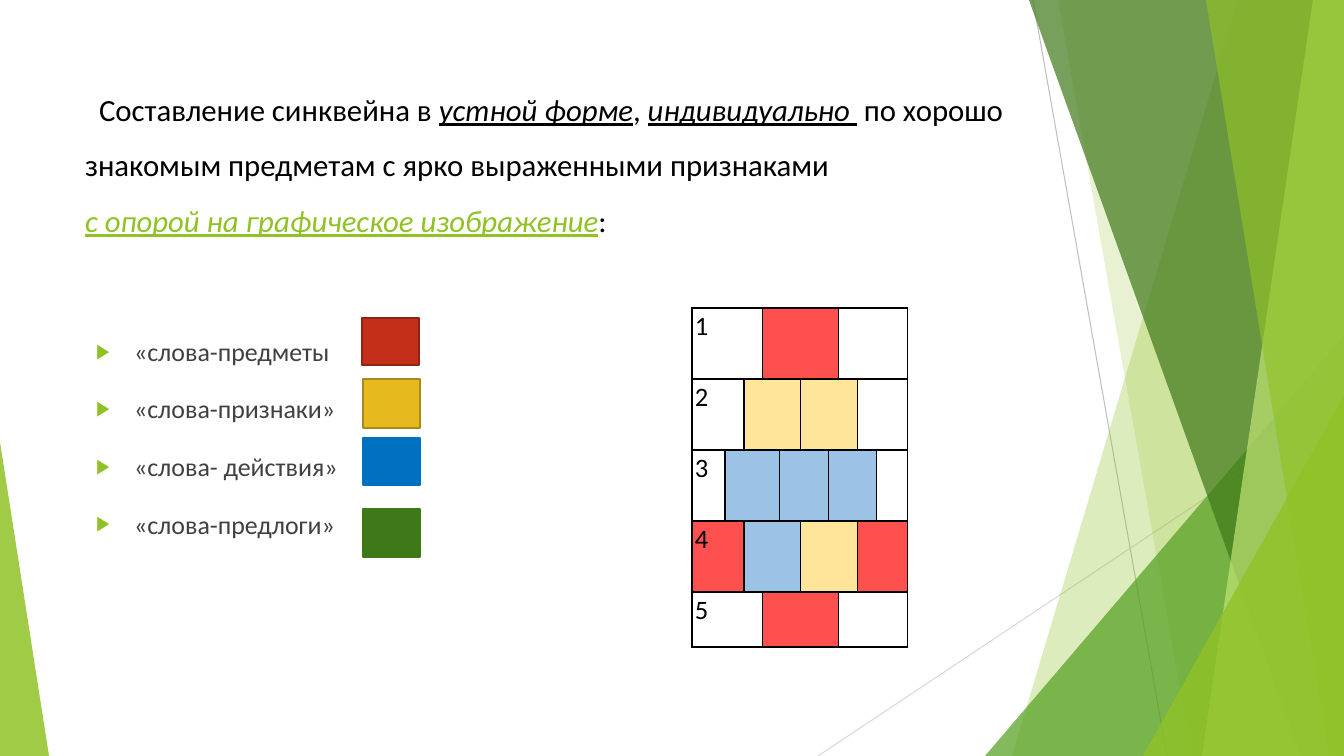
from lxml import etree
from pptx import Presentation
from pptx import util as u
from pptx.dml.color import RGBColor
from pptx.enum import shapes, text
from pptx.oxml import parse_xml
from pptx.oxml.ns import nsdecls, qn

PX = 914400 / 100.8
WIDTH, HEIGHT = 1344, 756
FONT = "Calibri"
GREEN = "90C226"


def px(*lengths):
    return [u.Emu(round(n * PX)) for n in lengths]


def paint(fill, colour, opacity=100):
    fill.solid()
    fill.fore_color.rgb = RGBColor.from_string(colour)
    if opacity < 100:
        srgb = fill._xPr.find(qn("a:solidFill"))[0]
        etree.SubElement(srgb, qn("a:alpha"), val=str(opacity * 1000))


deck = Presentation()
deck.slide_width, deck.slide_height = px(WIDTH, HEIGHT)
slide = deck.slides.add_slide(deck.slide_layouts[1])
heading, word_list = slide.placeholders

# Thin lines behind the facets
for x1, y1, x2, y2, colour in [(1033, 0, 1167, HEIGHT, "BFBFBF"),
                               (WIDTH, 406, 818, HEIGHT, "D9D9D9")]:
    ray = slide.shapes.add_connector(shapes.MSO_CONNECTOR.STRAIGHT, *px(x1, y1, x2, y2))
    paint(ray.line.fill, colour)
    ray.line.width = u.Pt(0.75)
    etree.SubElement(ray._element.spPr, qn("a:effectLst"))

# Green facets: a band has (top x, bottom x), a triangle has (left, top, width, apex)
facets = [
    ((1238, 1012), GREEN, 30),
    ((1058, 1192), GREEN, 20),
    ((985, 336, 359, 1), "54A021", 72),
    ((1029, 1301), "3F7819", 70),
    ((1313, 1202), "C0E474", 70),
    ((1206, 1329), GREEN, 65),
    ((1143, 396, 201, 1), GREEN, 80),
    ((0, 442, 49, 0), GREEN, 85),
]
for outline, colour, opacity in facets:
    if len(outline) == 2:
        top_x, bottom_x = outline
        builder = slide.shapes.build_freeform(top_x, 0, scale=PX)
        builder.add_line_segments([(WIDTH, 0), (WIDTH, HEIGHT), (bottom_x, HEIGHT)])
        facet = builder.convert_to_shape()
    else:
        left, top, width, apex = outline
        facet = slide.shapes.add_shape(shapes.MSO_SHAPE.ISOSCELES_TRIANGLE,
                                       *px(left, top, width, HEIGHT - top))
        facet.adjustments[0] = apex
    paint(facet.fill, colour, opacity)
    facet.line.fill.background()
    facet.shadow.inherit = False

# Placeholders go in front of the facets
for holder, box in [(heading, (75, 67, 947, 180)), (word_list, (86, 318, 454, 405))]:
    slide.shapes._spTree.append(holder._element)
    holder.left, holder.top, holder.width, holder.height = px(*box)
    frame = holder.text_frame
    frame.word_wrap = True
    frame.auto_size = text.MSO_AUTO_SIZE.NONE
    frame.vertical_anchor = text.MSO_ANCHOR.TOP

# Title
sentence = heading.text_frame.paragraphs[0]
sentence.alignment = text.PP_ALIGN.LEFT
sentence.line_spacing = 1.5
sentence._p.get_or_add_pPr().set("indent", str(px(14)[0]))
for words, colour, stressed in [
    ("Составление синквейна в ", "000000", False),
    ("устной форме", "000000", True),
    (", ", "000000", False),
    ("индивидуально ", "000000", True),
    (" по хорошо знакомым предметам с ярко выраженными признаками ", "000000", False),
    (None, None, None),
    ("с опорой на графическое изображение", GREEN, True),
    (":", "000000", False),
]:
    if words is None:
        sentence.add_line_break()
        continue
    run = sentence.add_run()
    run.text = words
    run.font.name, run.font.size = FONT, u.Pt(22)
    run.font.italic = run.font.underline = stressed
    paint(run.font.fill, colour)

# Word kinds
kinds = ["«слова-предметы", "«слова-признаки»", "«слова- действия»", "«слова-предлоги»"]
for n, kind in enumerate(kinds):
    frame = word_list.text_frame
    item = frame.add_paragraph() if n else frame.paragraphs[0]
    item.line_spacing, item.space_before = 1.4, u.Pt(10)
    props = item._p.get_or_add_pPr()
    indent = px(38)[0]
    props.set("marL", str(indent))
    props.set("indent", str(-indent))
    for mark in [f'<a:buClr {nsdecls("a")}><a:srgbClr val="{GREEN}"/></a:buClr>',
                 f'<a:buSzPct {nsdecls("a")} val="80000"/>',
                 f'<a:buChar {nsdecls("a")} char="▶"/>']:
        props.append(parse_xml(mark))
    run = item.add_run()
    run.text = kind
    run.font.name, run.font.size = FONT, u.Pt(18.5)
    paint(run.font.fill, "404040")

# Scheme of the five-line poem: each row lists (columns spanned, colour)
RED, YELLOW, BLUE, BLANK = "FF5050", "FFE599", "9CC2E5", None
columns = [33, 19, 19, 17, 21, 28, 10, 19, 19, 31]
heights = [71, 71, 71, 71, 55]
name_row = [(3, BLANK), (4, RED), (3, BLANK)]
poem = [
    name_row,
    [(2, BLANK), (3, YELLOW), (3, YELLOW), (2, BLANK)],
    [(1, BLANK), (3, BLUE), (2, BLUE), (3, BLUE), (1, BLANK)],
    [(2, RED), (3, BLUE), (3, YELLOW), (2, RED)],
    name_row,
]
scheme = slide.shapes.add_table(len(heights), len(columns),
                                *px(692, 308, sum(columns), sum(heights))).table
scheme.first_row = scheme.horz_banding = False
for column, width in zip(scheme.columns, px(*columns)):
    column.width = width
for row, height in zip(scheme.rows, px(*heights)):
    row.height = height
for r, verse in enumerate(poem):
    c = 0
    for span, colour in verse:
        cell = scheme.cell(r, c)
        if span > 1:
            cell.merge(scheme.cell(r, c + span - 1))
        cell.margin_left, cell.margin_right, cell.margin_top, cell.margin_bottom = px(3, 3, 0, 0)
        for side in ("lnL", "lnR", "lnT", "lnB"):
            cell._tc.get_or_add_tcPr().append(parse_xml(
                f'<a:{side} {nsdecls("a")} w="12700"><a:solidFill>'
                f'<a:srgbClr val="000000"/></a:solidFill></a:{side}>'))
        if colour:
            paint(cell.fill, colour)
        else:
            cell.fill.background()
        if c == 0:
            number = cell.text_frame.paragraphs[0]
            number.line_spacing = 1.07
            run = number.add_run()
            run.text = str(r + 1)
            run.font.name, run.font.size = FONT, u.Pt(19)
            paint(run.font.fill, "000000")
        c += span

# Colour key beside the word kinds
for left, top, height, colour, edge in [
    (362, 318, 47, "C42F1A", "912313"),
    (363, 379, 49, "E6B91E", "AA8916"),
    (363, 438, 47, "0070C0", "0070C0"),
    (363, 509, 48, "3F7819", "3F7819"),
]:
    swatch = slide.shapes.add_shape(shapes.MSO_SHAPE.RECTANGLE, *px(left, top, 57, height))
    paint(swatch.fill, colour)
    paint(swatch.line.fill, edge)
    swatch.line.width = u.Pt(1.5)
    swatch.shadow.inherit = False

deck.save("out.pptx")
